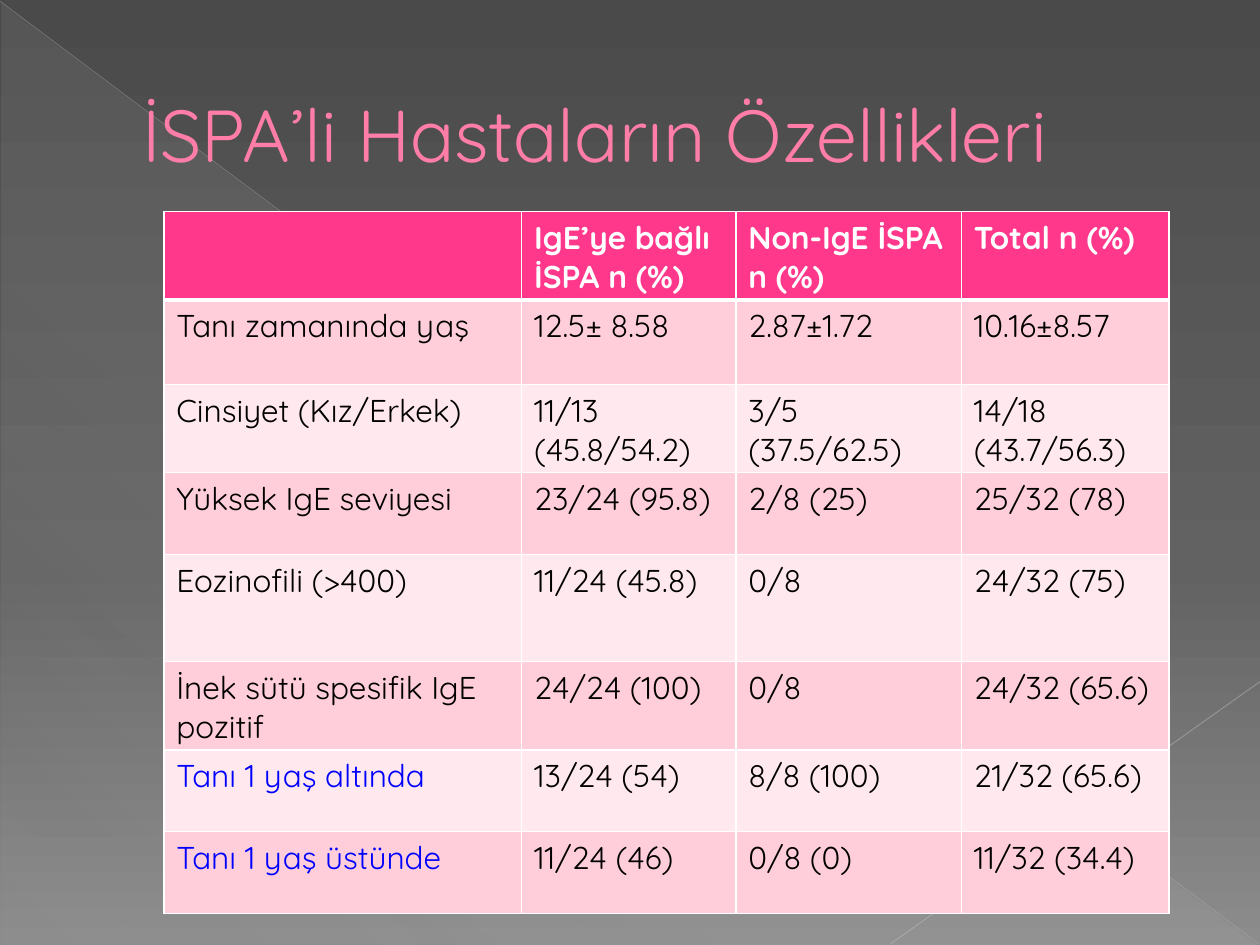
from dataclasses import dataclass

from lxml.etree import SubElement
from pptx import Presentation
from pptx.dml.color import RGBColor
from pptx.enum.shapes import MSO_CONNECTOR, MSO_SHAPE
from pptx.enum.text import MSO_ANCHOR
from pptx.oxml.ns import qn
from pptx.util import Inches, Pt


@dataclass(frozen=True)
class Theme:
    font: str = "Quicksand"
    title_size: int = 42
    cell_size: int = 18
    title: str = "FF7DA7"
    title_edge: str = "B12761"
    header: str = "FF388C"
    bands: tuple = ("FFCEDA", "FFE8EE")
    white: str = "FFFFFF"
    text: str = "000000"
    accent: str = "0000FF"
    backdrop: tuple = ((0, "4A4A4A", 100), (60, "626262", 100), (100, "8C8C8C", 100))
    wedge: tuple = ((0, "D2D2D2", 10), (70, "D2D2D2", 8), (100, "D2D2D2", 1))


def add_color(parent, color, opacity=100):
    clr = SubElement(parent, qn("a:srgbClr"), val=color)
    if opacity < 100:
        SubElement(clr, qn("a:alpha"), val=str(opacity * 1000))


def set_gradient(fill, element, stops, angle):
    fill.gradient()
    grad = next(element.iter(qn("a:gradFill")))
    gs_list = grad.find(qn("a:gsLst"))
    for gs in list(gs_list):
        gs_list.remove(gs)
    for pos, color, opacity in stops:
        gs = SubElement(gs_list, qn("a:gs"), pos=str(pos * 1000))
        add_color(gs, color, opacity)
    grad.find(qn("a:lin")).set("ang", str(angle * 60000))


class SlideBuilder:
    def __init__(self, prs, theme):
        self.theme = theme
        self.s = prs.slides.add_slide(prs.slide_layouts[6])

    def background(self):
        set_gradient(self.s.background.fill, self.s.element, self.theme.backdrop, 90)

    def wedge(self, x, y, w, h):
        sp = self.s.shapes.add_shape(
            MSO_SHAPE.RIGHT_TRIANGLE, Inches(x), Inches(y), Inches(w), Inches(h))
        sp.shadow.inherit = False
        sp.line.fill.background()
        set_gradient(sp.fill, sp.element, self.theme.wedge, 133)

    def line(self, x1, y1, x2, y2, color, width, opacity):
        cn = self.s.shapes.add_connector(
            MSO_CONNECTOR.STRAIGHT, Inches(x1), Inches(y1), Inches(x2), Inches(y2))
        cn.line.width = Pt(width)
        cn.line.color.rgb = RGBColor.from_string(color)
        clr = next(cn.element.spPr.iter(qn("a:srgbClr")))
        SubElement(clr, qn("a:alpha"), val=str(opacity * 1000))
        SubElement(cn.element.spPr, qn("a:effectLst"))

    def run(self, p, text, size, color, bold=False):
        r = p.add_run()
        r.text = text
        r.font.name = self.theme.font
        r.font.size = Pt(size)
        r.font.bold = bold
        r.font.color.rgb = RGBColor.from_string(color)
        return r

    def title(self, text, x, y, w, h):
        tf = self.s.shapes.add_textbox(Inches(x), Inches(y), Inches(w), Inches(h)).text_frame
        tf.word_wrap = True
        tf.vertical_anchor = MSO_ANCHOR.MIDDLE
        p = tf.paragraphs[0]
        p._p.get_or_add_pPr().set("marL", str(Inches(0.53)))
        r = self.run(p, text, self.theme.title_size, self.theme.title)
        rPr = r.font._element
        ln = SubElement(rPr, qn("a:ln"), w=str(Pt(0.5)))
        add_color(SubElement(ln, qn("a:solidFill")), self.theme.title_edge)
        rPr.insert(0, ln)

    def cell(self, cell, text, fill, color, bold, bottom):
        cell.fill.solid()
        cell.fill.fore_color.rgb = RGBColor.from_string(fill)
        tcPr = cell._tc.get_or_add_tcPr()
        for i, (side, width) in enumerate(zip("LRTB", (1, 1, 1, bottom))):
            ln = SubElement(tcPr, qn(f"a:ln{side}"), w=str(Pt(width)))
            add_color(SubElement(ln, qn("a:solidFill")), self.theme.white)
            tcPr.insert(i, ln)
        p = cell.text_frame.paragraphs[0]
        if text:
            self.run(p, text, self.theme.cell_size, color, bold)

    def table(self, x, y, widths, heights, rows, accent_labels):
        t = self.theme
        table = self.s.shapes.add_table(
            len(rows), len(widths), Inches(x), Inches(y),
            Inches(sum(widths)), Inches(sum(heights))).table
        for column, width in zip(table.columns, widths):
            column.width = Inches(width)
        for i, (values, height) in enumerate(zip(rows, heights)):
            table.rows[i].height = Inches(height)
            is_header = i == 0
            fill = t.header if is_header else t.bands[(i - 1) % 2]
            for j, text in enumerate(values):
                color = t.white if is_header else t.accent if text in accent_labels else t.text
                self.cell(table.cell(i, j), text, fill, color, is_header, 3 if is_header else 1)


ROWS = [
    ("", "IgE’ye bağlı İSPA n (%)", "Non-IgE İSPA n (%)", "Total n (%)"),
    ("Tanı zamanında yaş", "12.5± 8.58", "2.87±1.72", "10.16±8.57"),
    ("Cinsiyet (Kız/Erkek)", "11/13 (45.8/54.2)", "3/5 (37.5/62.5)", "14/18 (43.7/56.3)"),
    ("Yüksek IgE seviyesi", "23/24 (95.8)", "2/8 (25)", "25/32 (78)"),
    ("Eozinofili (>400)", "11/24 (45.8)", "0/8", "24/32 (75)"),
    ("İnek sütü spesifik IgE pozitif", "24/24 (100)", "0/8", "24/32 (65.6)"),
    ("Tanı 1 yaş altında", "13/24 (54)", "8/8 (100)", "21/32 (65.6)"),
    ("Tanı 1 yaş üstünde", "11/24 (46)", "0/8 (0)", "11/32 (34.4)"),
]


def main():
    prs = Presentation()
    prs.slide_width, prs.slide_height = Inches(10), Inches(7.5)
    slide = SlideBuilder(prs, Theme())
    slide.background()
    slide.wedge(0.01, 0.02, 9.98, 7.48)
    slide.line(0, 0.01, 9.99, 7.49, "BFBFBF", 0.39, 35)
    slide.line(10, 5.41, 7.07, 7.49, "C6C6C6", 0.47, 45)
    slide.title("İSPA’li Hastaların Özellikleri", 0.5, 0.29, 9, 1.53)
    slide.table(
        1.3, 1.68,
        widths=(2.84, 1.7, 1.79, 1.65),
        heights=(0.67, 0.67, 0.67, 0.65, 0.85, 0.67, 0.65, 0.65),
        rows=ROWS,
        accent_labels=("Tanı 1 yaş altında", "Tanı 1 yaş üstünde"))
    prs.save("out.pptx")


if __name__ == "__main__":
    main()
